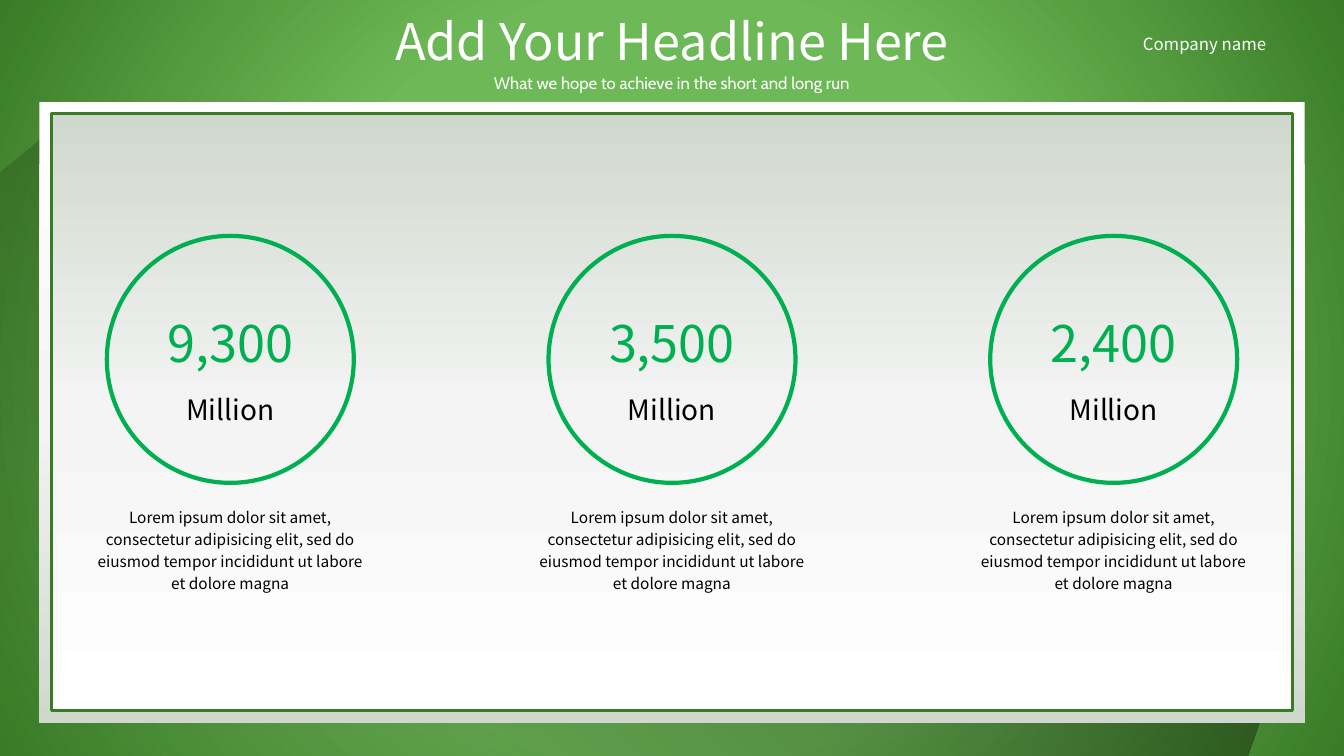
from dataclasses import dataclass

from lxml import etree
from pptx import Presentation
from pptx.dml.color import RGBColor
from pptx.enum.shapes import MSO_SHAPE
from pptx.enum.text import MSO_ANCHOR, MSO_AUTO_SIZE, PP_ALIGN
from pptx.oxml.ns import qn
from pptx.util import Pt

OVAL, CARD = MSO_SHAPE.OVAL, MSO_SHAPE.ROUNDED_RECTANGLE
LEFT, CENTER = PP_ALIGN.LEFT, PP_ALIGN.CENTER
TOP, MIDDLE = MSO_ANCHOR.TOP, MSO_ANCHOR.MIDDLE
NO_FIT = MSO_AUTO_SIZE.NONE


@dataclass(frozen=True)
class Theme:
    white: str = "FFFFFF"
    black: str = "000000"
    accent: str = "00B050"
    border: str = "397B26"
    backdrop: tuple = ((50, "6EB957", 100), (100, "397B26", 100))
    shade: tuple = ((0, "000000", 50), (100, "000000", 0))
    panel: tuple = ((0, "FFFFFF", 100), (50, "F4F4F4", 100), (100, "D0D8CD", 100))
    main_font: str = "Noto Sans CJK SC"
    subtitle_font: str = "Cabin"
    headline: int = 36
    unit: int = 20
    small: int = 12
    caption: int = 11


THEME = Theme()
CAPTION = ("Lorem ipsum dolor sit amet, consectetur adipisicing elit, sed do "
           "eiusmod tempor incididunt ut labore et dolore magna")
GOALS = (("9,300", "Million", CAPTION),
         ("3,500", "Million", CAPTION),
         ("2,400", "Million", CAPTION))


def set_gradient(owner, fill, stops, angle=None):
    fill.gradient()
    gradient = owner.find(".//" + qn("a:gradFill"))
    for child in list(gradient):
        gradient.remove(child)
    stop_list = etree.SubElement(gradient, qn("a:gsLst"))
    for position, color, opacity in stops:
        stop = etree.SubElement(stop_list, qn("a:gs"), pos=str(position * 1000))
        rgb = etree.SubElement(stop, qn("a:srgbClr"), val=color)
        if opacity < 100:
            etree.SubElement(rgb, qn("a:alpha"), val=str(opacity * 1000))
    if angle is None:
        radial = etree.SubElement(gradient, qn("a:path"), path="circle")
        etree.SubElement(radial, qn("a:fillToRect"),
                         l="50000", t="50000", r="50000", b="50000")
    else:
        etree.SubElement(gradient, qn("a:lin"), ang=str(angle * 60000), scaled="0")


def place(shape, box):
    shape.left, shape.top, shape.width, shape.height = map(Pt, box)


def write(shape, text, size, color, font=THEME.main_font, align=CENTER,
          anchor=TOP, wrap=False, spacing=1.0):
    frame = shape.text_frame
    frame.text = text
    frame.word_wrap = wrap
    frame.auto_size = NO_FIT
    frame.vertical_anchor = anchor
    paragraph = frame.paragraphs[0]
    paragraph.alignment = align
    paragraph.line_spacing = spacing
    paragraph.space_before = Pt(0)
    run_font = paragraph.runs[0].font
    run_font.name, run_font.size = font, Pt(size)
    run_font.color.rgb = RGBColor.from_string(color)


def add_text(slide, box, *args, **options):
    write(slide.shapes.add_textbox(*map(Pt, box)), *args, **options)


def add_backdrop(slide, box):
    left, top, width, height = box
    set_gradient(slide.element, slide.background.fill, THEME.backdrop)
    bottom = top + height
    corners = [(left + 28, top + 99.4), (left + 906.5, top + 495.4),
               (left + 890.6, bottom), (left, bottom), (left, top + 122.4)]
    start, *rest = [(Pt(x), Pt(y)) for x, y in corners]
    builder = slide.shapes.build_freeform(*start)
    builder.add_line_segments(rest, close=True)
    shade = builder.convert_to_shape()
    shade.shadow.inherit = False
    set_gradient(shade.element, shade.fill, THEME.shade, 135)
    shade.line.fill.background()


def add_header(slide, box):
    left, top, width, height = box
    title, subtitle = slide.placeholders
    place(title, (left + (width - 438.5) / 2, top + 3.6, 438.5, 51.1))
    write(title, "Add Your Headline Here", THEME.headline, THEME.white)
    place(subtitle, (left + (width - 273) / 2, top + 46.8, 273, 23))
    write(subtitle, "What we hope to achieve in the short and long run",
          THEME.small, THEME.white, THEME.subtitle_font, spacing=1.1)
    add_text(slide, (left + 809.3, top + 20.9, 112.3, 21.6), "Company name",
             THEME.small, THEME.white, align=LEFT)


def add_panel(slide, box):
    left, top, width, height = box
    for inset, angle in ((0, 90), (8.65, 270)):
        card = slide.shapes.add_shape(
            CARD, Pt(left + inset), Pt(top + inset),
            Pt(width - 2 * inset), Pt(height - 2 * inset))
        card.adjustments[0] = 0
        card.shadow.inherit = False
        set_gradient(card.element, card.fill, THEME.panel, angle)
        if inset:
            card.line.color.rgb = RGBColor.from_string(THEME.border)
            card.line.width = Pt(2.25)
        else:
            card.line.fill.background()


def add_goal(slide, box, amount, unit, caption):
    left, top, width, height = box

    def centered(part_width, offset, part_height):
        return left + (width - part_width) / 2, top + offset, part_width, part_height

    ring = slide.shapes.add_shape(OVAL, *map(Pt, centered(176.4, 0, 176.4)))
    ring.shadow.inherit = False
    ring.fill.background()
    ring.line.color.rgb = RGBColor.from_string(THEME.accent)
    ring.line.width = Pt(3)
    add_text(slide, centered(152, 50.4, 51.1), amount, THEME.headline,
             THEME.accent, anchor=MIDDLE, wrap=True)
    add_text(slide, centered(88.6, 108, 31.7), unit, THEME.unit,
             THEME.black, anchor=MIDDLE, wrap=True)
    add_text(slide, centered(width, 188, height - 188), caption, THEME.caption,
             THEME.black, wrap=True, spacing=1.2)


def main():
    deck = Presentation()
    deck.slide_width, deck.slide_height = Pt(960), Pt(540)
    slide = deck.slides.add_slide(deck.slide_layouts[0])
    add_backdrop(slide, (0, 0, 960, 540))
    add_panel(slide, (28.2, 72.7, 903.6, 443.5))
    add_header(slide, (0, 0, 960, 72))
    for column, goal in enumerate(GOALS):
        add_goal(slide, (59 + 315.5 * column, 168.5, 211, 259.3), *goal)
    deck.save("out.pptx")


if __name__ == "__main__":
    main()
